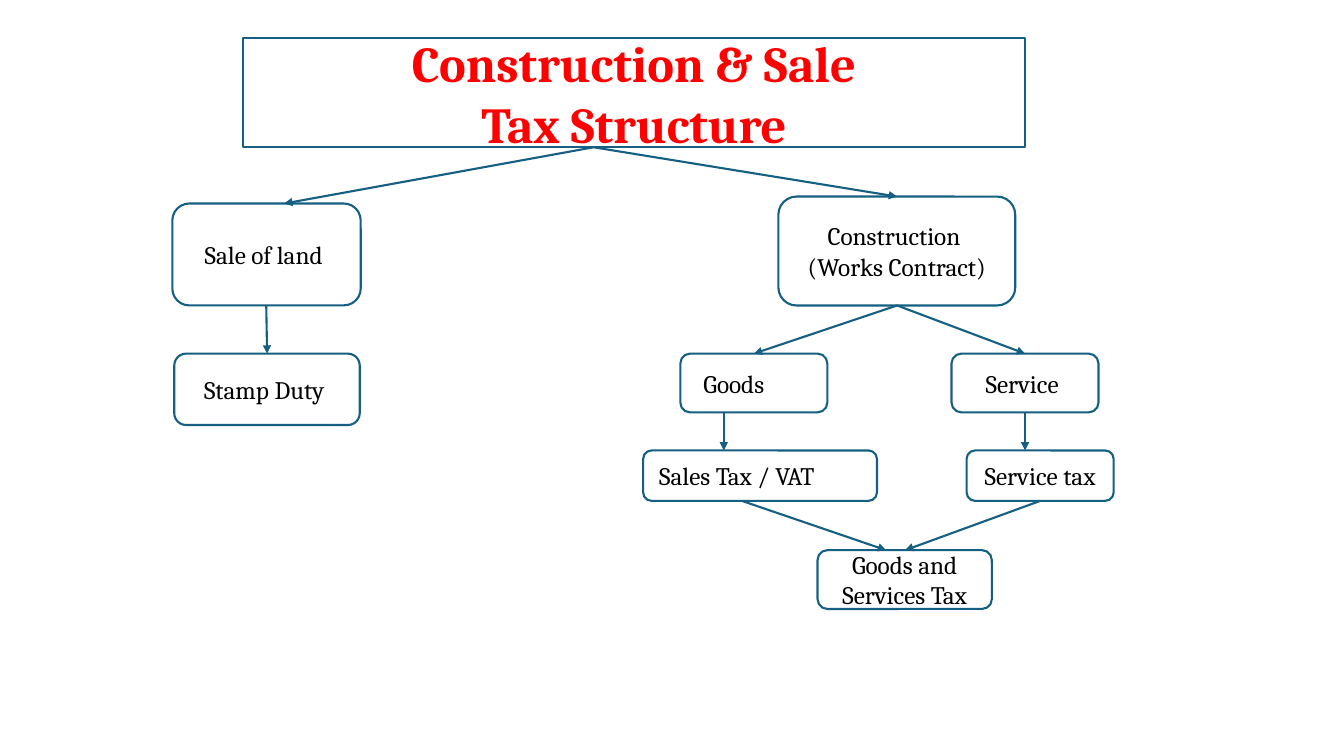
"""Build the construction and sale tax structure slide."""
from lxml.etree import SubElement
from pptx import Presentation
from pptx.dml.color import RGBColor
from pptx.enum.shapes import MSO_CONNECTOR as Connector, MSO_SHAPE as Preset
from pptx.enum.text import MSO_ANCHOR as Anchor, MSO_AUTO_SIZE as AutoSize, PP_ALIGN as Align
from pptx.oxml.ns import qn
from pptx.util import Pt

COLORS = {"border": "156082", "box": "FFFFFF", "heading": "FF0000", "label": "000000"}
HEADING = ("Construction & Sale", "Tax Structure")
HEADING_AREA = (173.5, 27.4, 558.7, 77.8)
TAXES = {
    "land": (("Sale of land ",), (123.1, 145.4, 134.6, 72.8)),
    "construction": (("Construction ", "(Works Contract)"), (556, 140.4, 169.2, 77.8)),
    "stamp duty": (("Stamp Duty ",), (124.5, 252.6, 132.5, 51)),
    "goods": (("Goods\t",), (486, 252.6, 105, 42)),
    "service": (("Service ",), (679.7, 252.6, 105, 42)),
    "sales tax": (("Sales Tax / VAT\t",), (459.4, 321.8, 167, 36)),
    "service tax": (("Service tax",), (690.5, 321.8, 105, 36)),
    "gst": (("Goods and Services Tax",), (584, 393, 124.5, 42)),
}
FLOWS = [
    ("heading", 424, "land", 203),
    ("heading", 424, "construction", 640.8),
    ("land", 190.2, "stamp duty", 190.8),
    ("construction", 640.8, "goods", 538.5),
    ("construction", 640.8, "service", 732.2),
    ("service", 732.2, "service tax", 732.2),
    ("sales tax", 530, "gst", 633),
    ("service tax", 743, "gst", 646.5),
    ("goods", 517, "sales tax", 517),
]
FRAME_FORMAT = {"word_wrap": True, "auto_size": AutoSize.NONE, "vertical_anchor": Anchor.MIDDLE}
HEADING_FONT = {"name": "Cambria", "size": Pt(36), "bold": True}
LABEL_FONT = {"name": "Cambria", "size": Pt(18), "bold": False}


def apply(target, values):
    for attribute, value in values.items():
        setattr(target, attribute, value)


def color(name):
    return RGBColor.from_string(COLORS[name])


def draw_border(line):
    line.width = Pt(1.5)
    line.fill.solid()
    line.fill.fore_color.rgb = color("border")


def format_box(box, lines, font_format, font_color):
    box.fill.solid()
    box.fill.fore_color.rgb = color("box")
    draw_border(box.line)
    frame = box.text_frame
    apply(frame, FRAME_FORMAT)
    frame.text = "\n".join(lines)
    for paragraph in frame.paragraphs:
        paragraph.alignment = Align.CENTER
        for run in paragraph.runs:
            apply(run.font, font_format)
            run.font.color.rgb = color(font_color)


def add_arrow(slide, start, end):
    arrow = slide.shapes.add_connector(Connector.STRAIGHT, *map(Pt, start + end))
    draw_border(arrow.line)
    SubElement(arrow.line._get_or_add_ln(), qn("a:tailEnd"), type="triangle")
    SubElement(arrow._element.spPr, qn("a:effectLst"))


def main():
    deck = Presentation()
    apply(deck, {"slide_width": Pt(960), "slide_height": Pt(540)})
    slide = deck.slides.add_slide(deck.slide_layouts[5])

    heading = slide.shapes.title
    apply(heading, dict(zip(("left", "top", "width", "height"), map(Pt, HEADING_AREA))))
    format_box(heading, HEADING, HEADING_FONT, "heading")

    areas = {"heading": HEADING_AREA}
    for tax, (lines, area) in TAXES.items():
        box = slide.shapes.add_shape(Preset.ROUNDED_RECTANGLE, *map(Pt, area))
        box.shadow.inherit = False
        format_box(box, lines, LABEL_FONT, "label")
        areas[tax] = area

    for source, source_x, target, target_x in FLOWS:
        _, top, _, height = areas[source]
        add_arrow(slide, (source_x, top + height), (target_x, areas[target][1]))

    deck.save("out.pptx")


if __name__ == "__main__":
    main()
